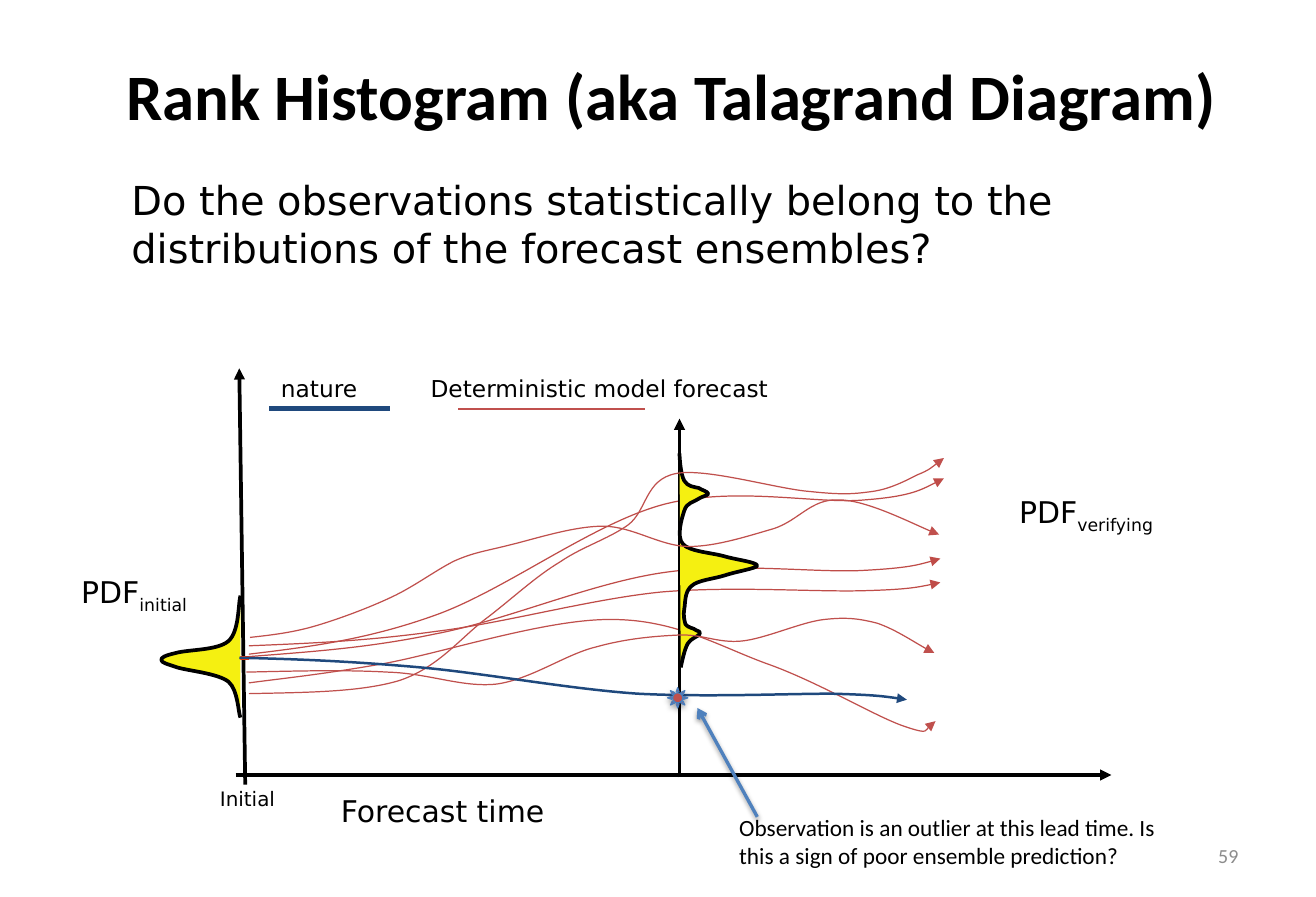
from dataclasses import dataclass
from typing import Optional

from lxml import etree
from pptx import Presentation
from pptx import util as u
from pptx.dml.color import RGBColor
from pptx.enum import shapes, text
from pptx.oxml.ns import qn

COLORS = {
    "black": "000000", "gray": "8C8C8C", "forecast": "C0504D", "forecast_soft": "BF4C48",
    "nature": "1F497D", "start": "FF3300", "pdf": "F5F011", "pointer": "4F81BD", "sun_edge": "4B7EBC",
}
SANS, CALIBRI = "DejaVu Sans", "Calibri"
Point = tuple[float, float]


@dataclass
class Label:
    content: str
    left: float
    top: float
    width: float
    height: float
    size: float
    font: str = SANS
    color: str = "black"
    subscript: str = ""
    bold: bool = False
    wrap: bool = False
    align: text.PP_ALIGN = text.PP_ALIGN.LEFT
    anchor: text.MSO_ANCHOR = text.MSO_ANCHOR.TOP


@dataclass
class Line:
    begin: Point
    end: Point
    color: str = "black"
    width: float = 2.25
    arrow: Optional[str] = None
    shadow_alpha: int = 0


@dataclass
class Curve:
    """Bezier chain: a start point, then two controls and an end point per piece."""
    points: list[Point]
    color: str = "forecast"
    width: float = 0.75
    arrow: Optional[str] = "triangle"
    fill: Optional[str] = None


HEADINGS = [
    Label("59", 7.88, 6.95, 2.57, 0.4, 12, CALIBRI, "gray", wrap=True,
          align=text.PP_ALIGN.RIGHT, anchor=text.MSO_ANCHOR.MIDDLE),
    Label("Do the observations statistically belong to the distributions of the forecast ensembles?",
          1, 1.42, 8.92, 1, 24, wrap=True),
    Label("Rank Histogram (aka Talagrand Diagram)", 0.55, 0, 10.12, 1.58, 39, CALIBRI, bold=True,
          wrap=True, align=text.PP_ALIGN.CENTER, anchor=text.MSO_ANCHOR.MIDDLE),
]
LABELS = [
    Label("Forecast time", 2.75, 6.58, 1.92, 0.4, 18),
    Label("Initial", 1.74, 6.53, 0.69, 0.3, 12),
    Label("PDF", 0.58, 4.75, 1.15, 0.4, 18, subscript="initial"),
    Label("PDF", 8.42, 4.08, 1.43, 0.4, 18, subscript="verifying"),
    Label("nature", 2.25, 3.08, 0.85, 0.34, 14),
    Label("Deterministic model forecast", 3.5, 3.08, 3.05, 0.34, 14),
    Label("Observation is an outlier at this lead time. Is this a sign of poor ensemble prediction?",
          6.08, 6.75, 3.75, 0.57, 14, CALIBRI, wrap=True),
]
INITIAL_AXES = [
    Line((2.05, 6.56), (2, 3.08), arrow="triangle"),
    Line((1.97, 6.48), (9.29, 6.48), arrow="triangle"),
    Line((1.83, 5.5), (2.08, 5.5), "start"),
]
VERIFYING_AXIS = Line((5.68, 6.5), (5.68, 3.5), arrow="triangle")
LEGEND = [
    Line((2.25, 3.42), (3.26, 3.42), "nature", 3),
    Line((3.83, 3.42), (5.39, 3.42), "forecast", 1.5),
]
POINTER = Line((6.33, 6.83), (5.83, 5.92), "pointer", 2, "arrow", 38)

FORECASTS_BEHIND = [
    Curve([(2.08, 5.49), (2.58, 5.45), (3.07, 5.42), (3.64, 5.3), (4.22, 5.19), (4.93, 4.88), (5.53, 4.79),
           (6.12, 4.7), (6.81, 4.79), (7.2, 4.77), (7.59, 4.75), (7.73, 4.71), (7.86, 4.67)], "forecast_soft"),
    Curve([(2.08, 5.4), (2.58, 5.38), (3.07, 5.36), (3.64, 5.28), (4.22, 5.21), (4.93, 5.01), (5.53, 4.95),
           (6.12, 4.9), (6.81, 4.95), (7.2, 4.94), (7.59, 4.93), (7.73, 4.9), (7.86, 4.87)], "forecast_soft"),
    Curve([(2.08, 5.47), (2.58, 5.41), (3.07, 5.35), (3.65, 5.14), (4.23, 4.93), (4.95, 4.38), (5.54, 4.22),
           (6.14, 4.06), (6.84, 4.22), (7.23, 4.18), (7.62, 4.15), (7.75, 4.07), (7.89, 4)], "forecast_soft"),
    Curve([(2.08, 5.71), (2.38, 5.67), (2.69, 5.64), (3.2, 5.55), (3.7, 5.46), (4.58, 5.17), (5.12, 5.18),
           (5.66, 5.18), (6.04, 5.42), (6.44, 5.56), (6.85, 5.71), (7.32, 5.99), (7.55, 6.07),
           (7.78, 6.15), (7.78, 6.04), (7.82, 6.03)]),
]
DISTRIBUTIONS = [
    Curve([(5.68, 3.79), (5.68, 3.83), (5.69, 3.97), (5.72, 4.02), (5.75, 4.07), (5.8, 4.07), (5.84, 4.08),
           (5.87, 4.1), (5.92, 4.11), (5.92, 4.13), (5.92, 4.14), (5.87, 4.15), (5.84, 4.17),
           (5.8, 4.2), (5.74, 4.2), (5.72, 4.27), (5.7, 4.33), (5.65, 4.49), (5.71, 4.55),
           (5.76, 4.61), (5.94, 4.62), (6.05, 4.65), (6.15, 4.68), (6.33, 4.7), (6.33, 4.73),
           (6.33, 4.75), (6.15, 4.78), (6.06, 4.81), (5.97, 4.84), (5.83, 4.85), (5.78, 4.9),
           (5.72, 4.95), (5.73, 5.04), (5.72, 5.09), (5.71, 5.14), (5.72, 5.19), (5.73, 5.22),
           (5.75, 5.25), (5.8, 5.25), (5.82, 5.27), (5.84, 5.28), (5.86, 5.28), (5.85, 5.3),
           (5.84, 5.32), (5.77, 5.34), (5.75, 5.38), (5.72, 5.43), (5.7, 5.54), (5.69, 5.58)],
          "black", 2.25, None, "pdf"),
    Curve([(2.01, 6), (1.99, 5.95), (1.99, 5.77), (1.91, 5.7), (1.82, 5.63), (1.58, 5.61), (1.48, 5.58),
           (1.39, 5.55), (1.35, 5.54), (1.35, 5.52), (1.34, 5.5), (1.38, 5.48), (1.47, 5.46),
           (1.57, 5.43), (1.82, 5.44), (1.91, 5.36), (2, 5.28), (1.99, 5.06), (2.01, 4.98)],
          "black", 2.25, None, "pdf"),
]
FORECASTS_IN_FRONT = [
    Curve([(2.08, 5.8), (2.54, 5.79), (3.01, 5.79), (3.34, 5.69), (3.67, 5.58), (3.86, 5.32), (4.08, 5.16),
           (4.3, 4.99), (4.48, 4.82), (4.68, 4.7), (4.87, 4.57), (5.08, 4.51), (5.25, 4.39),
           (5.41, 4.27), (5.39, 4.01), (5.65, 3.96), (5.9, 3.91), (6.5, 4.09), (6.77, 4.11),
           (7.05, 4.14), (7.14, 4.13), (7.29, 4.11), (7.44, 4.09), (7.57, 4.02), (7.67, 3.97),
           (7.77, 3.93), (7.85, 3.86), (7.89, 3.83)]),
    Curve([(2.06, 5.62), (2.48, 5.61), (2.89, 5.6), (3.24, 5.62), (3.59, 5.63), (3.86, 5.75), (4.15, 5.72),
           (4.44, 5.68), (4.73, 5.47), (4.98, 5.41), (5.23, 5.34), (5.46, 5.32), (5.67, 5.31),
           (5.87, 5.3), (6, 5.38), (6.2, 5.36), (6.4, 5.34), (6.7, 5.2), (6.89, 5.18),
           (7.07, 5.16), (7.17, 5.17), (7.33, 5.21), (7.48, 5.26), (7.72, 5.42), (7.81, 5.46)]),
    Curve([(2.09, 5.33), (2.27, 5.31), (2.45, 5.29), (2.65, 5.23), (2.85, 5.17), (3.09, 5.08), (3.28, 4.99),
           (3.47, 4.9), (3.64, 4.77), (3.8, 4.69), (3.96, 4.62), (4.05, 4.61), (4.25, 4.56),
           (4.46, 4.51), (4.79, 4.4), (5.04, 4.4), (5.29, 4.4), (5.52, 4.57), (5.76, 4.57),
           (5.99, 4.57), (6.26, 4.48), (6.47, 4.42), (6.68, 4.35), (6.78, 4.17), (7.01, 4.18),
           (7.24, 4.18), (7.71, 4.42), (7.85, 4.47)]),
]
NATURE = Curve([(2, 5.5), (2.48, 5.51), (2.95, 5.53), (3.51, 5.58), (4.06, 5.63), (4.75, 5.76), (5.33, 5.8),
                (5.9, 5.83), (6.57, 5.8), (6.95, 5.8), (7.32, 5.81), (7.45, 5.83), (7.58, 5.85)], "nature", 1.5)


def rgb(name: str) -> RGBColor:
    return RGBColor.from_string(COLORS[name])


def style_line(line, color: str, width: float, arrow: Optional[str] = None) -> None:
    line.color.rgb = rgb(color)
    line.width = u.Pt(width)
    if arrow:
        etree.SubElement(line._get_or_add_ln(), qn("a:tailEnd"), type=arrow)


def add_shadow(effects, alpha: int) -> None:
    shadow = etree.SubElement(effects, qn("a:outerShdw"), blurRad=str(u.Pt(3.1)), dist=str(u.Pt(1.7)),
                              dir="5400000", rotWithShape="0")
    color = etree.SubElement(shadow, qn("a:srgbClr"), val=COLORS["black"])
    etree.SubElement(color, qn("a:alpha"), val=str(alpha * 1000))


def add_label(slide, label: Label) -> None:
    box = slide.shapes.add_textbox(*map(u.Inches, (label.left, label.top, label.width, label.height)))
    frame = box.text_frame
    frame.word_wrap = label.wrap
    frame.vertical_anchor = label.anchor
    paragraph = frame.paragraphs[0]
    paragraph.alignment = label.align
    for content in filter(None, (label.content, label.subscript)):
        run = paragraph.add_run()
        run.text = content
        run.font.name, run.font.size, run.font.bold = label.font, u.Pt(label.size), label.bold
        run.font.color.rgb = rgb(label.color)
        if content == label.subscript:
            run.font._element.set("baseline", "-25000")


def add_line(slide, line: Line) -> None:
    connector = slide.shapes.add_connector(shapes.MSO_CONNECTOR.STRAIGHT,
                                           *map(u.Inches, (*line.begin, *line.end)))
    style_line(connector.line, line.color, line.width, line.arrow)
    effects = etree.SubElement(connector._element.spPr, qn("a:effectLst"))
    if line.shadow_alpha:
        add_shadow(effects, line.shadow_alpha)


def add_curve(slide, curve: Curve) -> None:
    """Build the chain from straight segments, then merge each three into a cubic Bezier."""
    start, *rest = [(u.Inches(x), u.Inches(y)) for x, y in curve.points]
    builder = slide.shapes.build_freeform(*start)
    builder.add_line_segments(rest, close=False)
    shape = builder.convert_to_shape()
    segments = list(shape._element.iter(qn("a:lnTo")))
    for index in range(0, len(segments), 3):
        bezier = etree.Element(qn("a:cubicBezTo"))
        segments[index].addprevious(bezier)
        for segment in segments[index:index + 3]:
            bezier.append(segment[0])
            segment.getparent().remove(segment)
    shape.shadow.inherit = False
    if curve.fill:
        shape.fill.solid()
        shape.fill.fore_color.rgb = rgb(curve.fill)
    else:
        shape.fill.background()
    style_line(shape.line, curve.color, curve.width, curve.arrow)


def add_observation(slide) -> None:
    sun = slide.shapes.add_shape(shapes.MSO_SHAPE.SUN, *map(u.Inches, (5.58, 5.75, 0.17, 0.17)))
    sun.fill.solid()
    sun.fill.fore_color.rgb = rgb("forecast")
    style_line(sun.line, "sun_edge", 0.75)
    sun.shadow.inherit = False
    add_shadow(sun._element.spPr.find(qn("a:effectLst")), 35)


def main() -> None:
    presentation = Presentation()
    presentation.slide_width, presentation.slide_height = u.Inches(11), u.Inches(7.5)
    slide = presentation.slides.add_slide(presentation.slide_layouts[6])
    draw = {Label: add_label, Line: add_line, Curve: add_curve}
    for item in [*HEADINGS, *INITIAL_AXES, *FORECASTS_BEHIND, VERIFYING_AXIS, *DISTRIBUTIONS,
                 *FORECASTS_IN_FRONT, *LEGEND, NATURE, POINTER, *LABELS]:
        draw[type(item)](slide, item)
    add_observation(slide)
    presentation.save("out.pptx")


if __name__ == "__main__":
    main()
